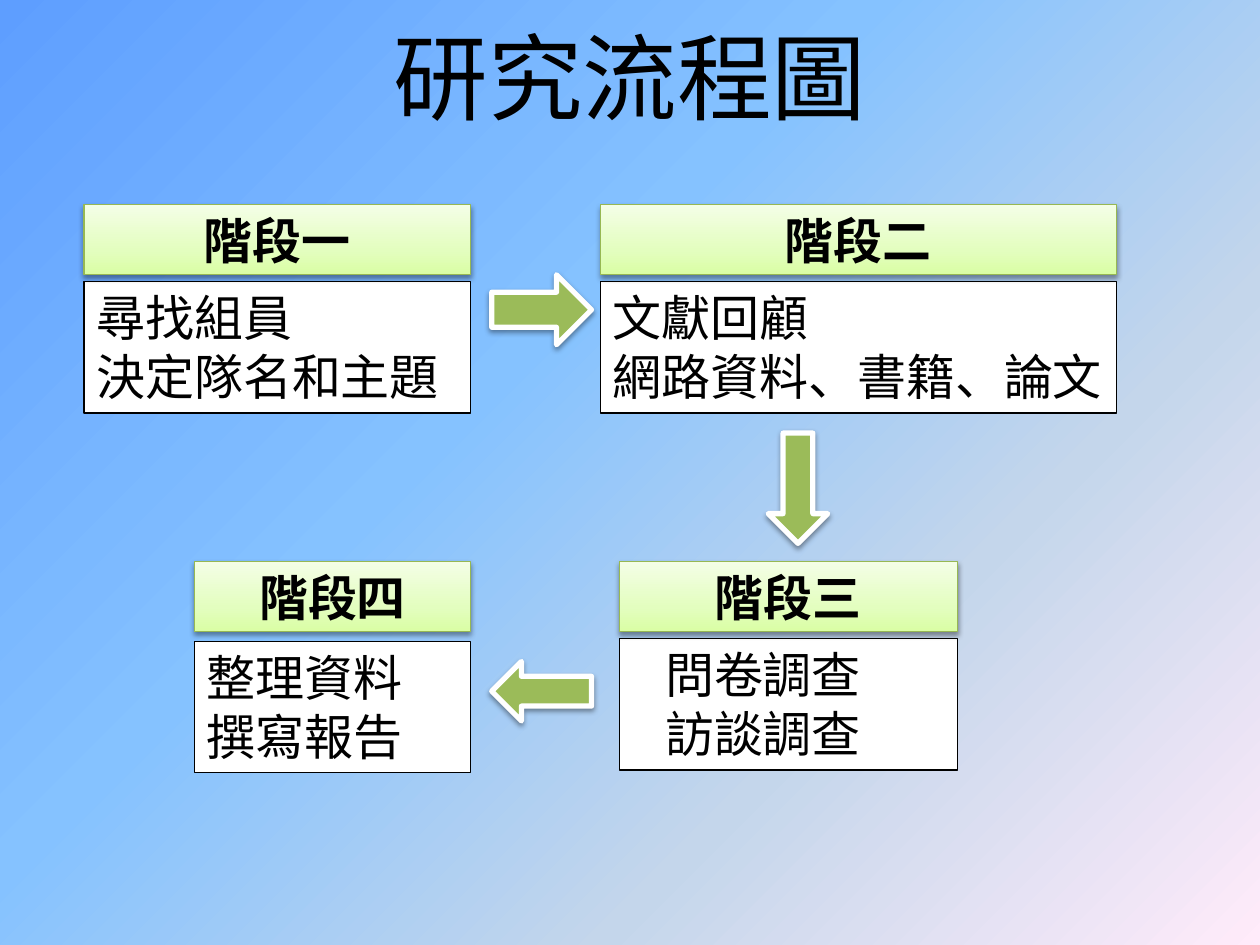
from lxml import etree
from pptx import Presentation
from pptx import util as u
from pptx.dml.color import RGBColor
from pptx.enum import shapes, text
from pptx.oxml import ns

Pt = u.Pt
FONT = "Noto Sans CJK SC"
BLACK = RGBColor(0x00, 0x00, 0x00)
WHITE = RGBColor(0xFF, 0xFF, 0xFF)
GREEN = RGBColor(0x9B, 0xBB, 0x59)
EDGE = RGBColor(0x97, 0xB8, 0x53)
SKY = [
    (0, RGBColor(0x5E, 0x9E, 0xFF)),
    (40, RGBColor(0x85, 0xC2, 0xFF)),
    (70, RGBColor(0xC4, 0xD6, 0xEB)),
    (100, RGBColor(0xFF, 0xEB, 0xFA)),
]
LIME = [
    (0, RGBColor(0xDA, 0xFE, 0xA4)),
    (35, RGBColor(0xE3, 0xFE, 0xBF)),
    (100, RGBColor(0xF4, 0xFE, 0xE6)),
]
HEAD_HEIGHT, BODY_HEIGHT = 40, 75
STAGES = [
    ((48, 117, 221), "階段一", ["尋找組員", "決定隊名和主題"], 4, 0),
    ((343, 117, 295), "階段二", ["文獻回顧", "網路資料、書籍、論文"], 4, 0),
    ((354, 321, 193), "階段三", ["問卷調查", "訪談調查"], 4, 19),
    ((111, 321, 158), "階段四", ["整理資料", "撰寫報告"], 5.5, 0),
]
ARROWS = [
    (shapes.MSO_SHAPE.RIGHT_ARROW, (281, 157, 57, 40)),
    (shapes.MSO_SHAPE.DOWN_ARROW, (439, 247.5, 34, 63)),
    (shapes.MSO_SHAPE.LEFT_ARROW, (281, 378, 57, 34)),
]


def add_node(parent, tag, **attributes):
    """Append a DrawingML element with the given attributes."""
    node = etree.SubElement(parent, ns.qn(tag))
    for name, value in attributes.items():
        node.set(name, str(value))
    return node


def set_gradient(fill, owner, stops, angle):
    """Give a fill several stops and a clockwise angle in degrees."""
    fill.gradient()
    gradient = next(owner.iter(ns.qn("a:gradFill")))
    for child in list(gradient):
        gradient.remove(child)
    stop_list = add_node(gradient, "a:gsLst")
    for position, color in stops:
        stop = add_node(stop_list, "a:gs", pos=position * 1000)
        add_node(stop, "a:srgbClr", val=color)
    add_node(gradient, "a:lin", ang=angle * 60000, scaled=0)


def add_shadow(shape):
    """Put a soft shadow below a shape."""
    effects = next(shape.element.iter(ns.qn("a:effectLst")))
    shadow = add_node(effects, "a:outerShdw", blurRad=Pt(3.1), dist=Pt(1.6),
                      dir=90 * 60000, rotWithShape=0)
    color = add_node(shadow, "a:srgbClr", val=BLACK)
    add_node(color, "a:alpha", val=38000)


def write_lines(shape, lines, size, align, anchor, bold=False, indent=0):
    """Write one paragraph for each line."""
    frame = shape.text_frame
    frame.word_wrap = True
    frame.vertical_anchor = anchor
    for index, line in enumerate(lines):
        para = frame.paragraphs[0] if index == 0 else frame.add_paragraph()
        para.alignment = align
        if indent:
            para._p.get_or_add_pPr().set("marL", str(Pt(indent)))
        span = para.add_run()
        span.text = line
        span.font.name = FONT
        span.font.size = Pt(size)
        span.font.bold = bold
        span.font.color.rgb = BLACK
        add_node(span.font._element, "a:ea", typeface=FONT)


def add_block(page, kind, box, line_color, line_width):
    """Add an outlined shape without a shadow."""
    shape = page.shapes.add_shape(kind, *map(Pt, box))
    shape.shadow.inherit = False
    shape.line.color.rgb = line_color
    shape.line.width = Pt(line_width)
    return shape


def add_title(page, box, title):
    """Add the centred slide title."""
    shape = page.shapes.add_textbox(*map(Pt, box))
    write_lines(shape, [title], 54, text.PP_ALIGN.CENTER, text.MSO_ANCHOR.MIDDLE)


def add_stage(page, box, heading, tasks, gap, indent):
    """Add a stage heading with its task box below."""
    left, top, width = box
    rectangle = shapes.MSO_SHAPE.RECTANGLE
    body_box = (left, top + HEAD_HEIGHT + gap, width, BODY_HEIGHT)
    body = add_block(page, rectangle, body_box, BLACK, 0.75)
    body.fill.solid()
    body.fill.fore_color.rgb = WHITE
    write_lines(body, tasks, 28, text.PP_ALIGN.LEFT, text.MSO_ANCHOR.TOP, indent=indent)
    head = add_block(page, rectangle, (left, top, width, HEAD_HEIGHT), EDGE, 0.75)
    set_gradient(head.fill, head.element, LIME, 270)
    add_shadow(head)
    write_lines(head, [heading], 28, text.PP_ALIGN.CENTER, text.MSO_ANCHOR.MIDDLE, bold=True)


def add_arrow(page, kind, box):
    """Add a green block arrow with a white outline."""
    arrow = add_block(page, kind, box, WHITE, 3)
    arrow.fill.solid()
    arrow.fill.fore_color.rgb = GREEN
    add_shadow(arrow)


def main():
    """Build the research flow chart."""
    deck = Presentation()
    deck.slide_width, deck.slide_height = Pt(720), Pt(540)
    page = deck.slides.add_slide(deck.slide_layouts[6])
    set_gradient(page.background.fill, page.element, SKY, 45)
    add_title(page, (36, -2, 648, 90), "研究流程圖")
    for stage in STAGES:
        add_stage(page, *stage)
    for kind, box in ARROWS:
        add_arrow(page, kind, box)
    deck.save("out.pptx")


if __name__ == "__main__":
    main()
